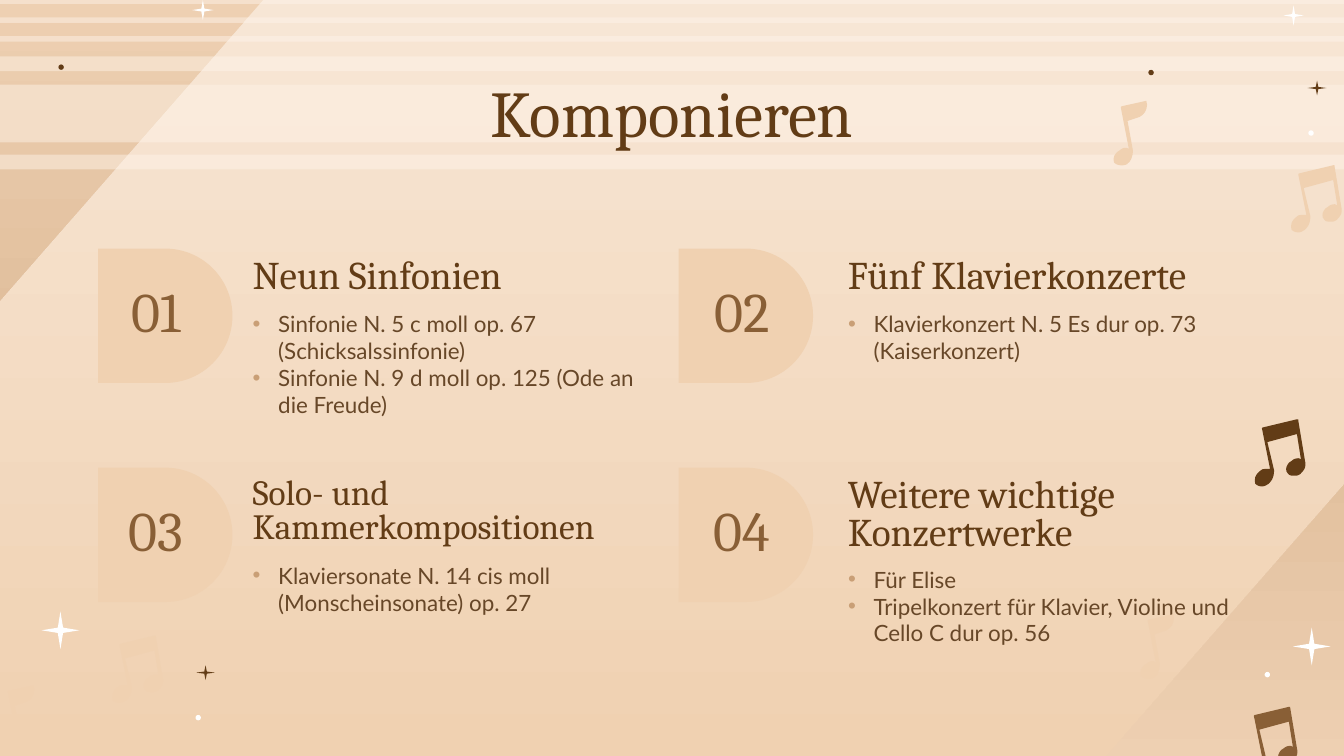
from lxml.etree import SubElement
from pptx import Presentation
from pptx.dml.color import RGBColor
from pptx.enum.shapes import MSO_SHAPE
from pptx.enum.text import MSO_ANCHOR, MSO_AUTO_SIZE, PP_ALIGN
from pptx.oxml.ns import qn
from pptx.util import Emu, Inches, Pt

CELL = Inches(0.1)  # the slide is a grid of 100 columns by 56.25 rows
COLS, ROWS = 100, 56.25

WHITE = RGBColor(0xFF, 0xFF, 0xFF)
CREAM = RGBColor(0xFF, 0xF5, 0xEB)
PALE = RGBColor(0xF7, 0xE6, 0xD5)
SAND = RGBColor(0xF0, 0xD1, 0xB1)
PEACH = RGBColor(0xEE, 0xD0, 0xB2)
TAN = RGBColor(0xCE, 0xA6, 0x7E)
BULLET = RGBColor(0xC9, 0x9F, 0x76)
BROWN = RGBColor(0x89, 0x5F, 0x36)
DARK = RGBColor(0x62, 0x3C, 0x16)
BODY = RGBColor(0x67, 0x47, 0x28)

# Outlines: a pair is a line's end, six numbers are a Bezier curve.
PAIR_NOTE = [
    (32, 0), (7, 6), (6, 6, 6, 7, 6, 7), (12, 37), (11, 37, 10, 37, 9, 37),
    (7, 37, 6, 37, 4, 39), (1, 41, 0, 45, 1, 48), (2, 49, 4, 50, 6, 50),
    (8, 50, 9, 49, 11, 48), (14, 45, 15, 42, 15, 38), (10, 17), (32, 11),
    (35, 30), (35, 30, 34, 29, 33, 29), (31, 29, 29, 30, 28, 31),
    (24, 33, 23, 38, 25, 40), (26, 42, 28, 42, 30, 42), (31, 42, 33, 42, 34, 41),
    (35, 41, 35, 40, 35, 40), (38, 38, 39, 34, 38, 31), (33, 1),
    (33, 0, 33, 0, 32, 0)]
SINGLE_NOTE = [
    (25, 0), (7, 4), (6, 4, 6, 5, 6, 5), (12, 36), (11, 35, 10, 35, 9, 35),
    (8, 35, 6, 36, 5, 37), (1, 39, 0, 43, 1, 46), (2, 47, 4, 48, 6, 48),
    (8, 48, 9, 48, 11, 47), (11, 47, 11, 46, 12, 46), (14, 44, 15, 40, 15, 37),
    (11, 15), (17, 13), (23, 12, 27, 6, 25, 0)]
STAR = [(50, 0), (43, 43), (0, 50), (43, 57), (50, 100), (57, 57), (100, 50), (57, 43)]
WEDGE = [(0, 2), (0, 572), (502, 572), (1003, 0)]

BACK_NOTES = [(PAIR_NOTE, 96, 12.3, SAND), (SINGLE_NOTE, 0, 51, SAND),
              (PAIR_NOTE, 92.7, 52.6, BROWN)]
FRONT_NOTES = [(PAIR_NOTE, 93.3, 31.2, DARK), (SINGLE_NOTE, 82.8, 7.5, SAND),
               (PAIR_NOTE, 8.3, 47.3, SAND), (SINGLE_NOTE, 84.8, 45.7, SAND)]
STARS = [(14.3, 0, 1.6, 1.5, WHITE), (95.5, 0.4, 1.5, 1.5, WHITE),
         (97.3, 6, 1.4, 1.1, DARK), (14.6, 49.5, 1.4, 1.1, DARK),
         (3.1, 45.5, 2.8, 2.8, WHITE), (96.2, 46.7, 2.8, 2.8, WHITE)]
DOTS = [(97.35, 9.7, WHITE), (85.45, 5.2, DARK), (4.35, 4.8, DARK),
        (14.55, 53.2, WHITE), (94.1, 50, WHITE)]
STAVES = [(6.3, 4.3), (4.2, 1.1), (11.5, 1.1), (2.7, 0.4), (1.3, 0.4), (-0.1, 0.4)]

# number, heading, heading size, first row of the list, list
CARDS = [
    ("01", "Neun Sinfonien", 21, 4.6,
     ["Sinfonie N. 5 c moll op. 67 (Schicksalssinfonie)",
      "Sinfonie N. 9 d moll op. 125 (Ode an die Freude)"]),
    ("02", "Fünf Klavierkonzerte", 21, 4.6,
     ["Klavierkonzert N. 5 Es dur op. 73 (Kaiserkonzert)"]),
    ("03", "Solo- und Kammerkompositionen", 19, 7,
     ["Klaviersonate N. 14 cis moll (Monscheinsonate) op. 27"]),
    ("04", "Weitere wichtige Konzertwerke", 21, 7.3,
     ["Für Elise", "Tripelkonzert für Klavier, Violine und Cello C dur op. 56"]),
]


def cells(n):
    return Emu(round(n * CELL))


def gradient(fill, first, last):
    fill.gradient()
    fill.gradient_angle = 270
    for stop, color in zip(fill.gradient_stops, (first, last)):
        stop.color.rgb = color


def plain(sp, color):
    sp.shadow.inherit = False
    sp.line.fill.background()
    sp.fill.solid()
    sp.fill.fore_color.rgb = color
    return sp


def shape(s, kind, x, y, w, h, color):
    return plain(s.shapes.add_shape(kind, *map(cells, (x, y, w, h))), color)


def flatten(outline, steps=6):
    """Turn lines and curves into points, in tenths of the outline's unit."""
    points = []
    for seg in outline:
        if len(seg) == 2:
            points.append((seg[0] * 10, seg[1] * 10))
            continue
        x0, y0 = points[-1]
        x1, y1, x2, y2, x3, y3 = (10 * v for v in seg)
        for t in (i / steps for i in range(1, steps + 1)):
            u = 1 - t
            a, b, c, d = u ** 3, 3 * u * u * t, 3 * u * t * t, t ** 3
            points.append((a * x0 + b * x1 + c * x2 + d * x3,
                           a * y0 + b * y1 + c * y2 + d * y3))
    return points


def outlined(s, outline, x, y, color, sx=0.1, sy=0.1):
    """Draw an outline at x, y; sx and sy are cells per unit of the outline."""
    first, *rest = flatten(outline)
    fb = s.shapes.build_freeform(*first, scale=(sx * CELL / 10, sy * CELL / 10))
    fb.add_line_segments(rest, close=True)
    return plain(fb.convert_to_shape(cells(x), cells(y)), color)


def write(sp, box, lines, size, font, color, align=PP_ALIGN.LEFT,
          anchor=MSO_ANCHOR.TOP, spacing=1.0, bullets=False):
    sp.left, sp.top, sp.width, sp.height = map(cells, box)
    tf = sp.text_frame
    tf.word_wrap, tf.auto_size = True, MSO_AUTO_SIZE.NONE
    tf.vertical_anchor = anchor
    tf.margin_left = tf.margin_right = tf.margin_top = tf.margin_bottom = 0
    for i, line in enumerate(lines):
        p = tf.add_paragraph() if i else tf.paragraphs[0]
        p.alignment, p.line_spacing, p.space_before = align, spacing, Pt(0)
        r = p.add_run()
        r.text = line
        r.font.size, r.font.name, r.font.bold = Pt(size), font, False
        r.font.color.rgb = color
        if bullets:
            pPr = p._p.get_or_add_pPr()
            pPr.set("marL", str(cells(1.9)))
            pPr.set("indent", str(-cells(1.9)))
            SubElement(SubElement(pPr, qn("a:buClr")), qn("a:srgbClr")).set("val", str(BULLET))
            SubElement(pPr, qn("a:buChar")).set("char", "•")


def to_front(s, sp):
    s.shapes._spTree.append(sp._element)
    return sp


def backdrop(s):
    gradient(s.background.fill, PALE, SAND)
    for x, y, turn in ((-80.2, -0.6, 0), (81.5, 0, 180)):
        wedge = outlined(s, WEDGE, x, y, PEACH)
        gradient(wedge.fill, PEACH, TAN)
        wedge.rotation = turn
    for y, h in STAVES:
        stave = shape(s, MSO_SHAPE.RECTANGLE, -6.4, y, 107.3, h, CREAM)
        clr = stave._element.spPr.find(qn("a:solidFill"))[0]
        SubElement(clr, qn("a:alpha")).set("val", "46000")
    for x, y, w, h, color in STARS:
        outlined(s, STAR, x, y, color, w / 100, h / 100)
    for x, y, color in DOTS:
        shape(s, MSO_SHAPE.OVAL, x, y, 0.4, 0.4, color)


def notes(s, items):
    for outline, x, y, color in items:
        outlined(s, outline, x, y, color)


def card(s, body, x, y, number_dx, text_dx, content):
    number, heading, size, list_dy, lines = content
    shape(s, MSO_SHAPE.FLOWCHART_DELAY, x, y, 10, 10, SAND)
    write(s.shapes.add_textbox(0, 0, 0, 0), (x + number_dx, y, 8, 9.1), [number],
          30, "Cambria", BROWN, PP_ALIGN.CENTER, MSO_ANCHOR.MIDDLE)
    write(s.shapes.add_textbox(0, 0, 0, 0), (x + text_dx, y + 0.8, 29.6, 3), [heading],
          size, "Cambria", DARK, spacing=0.8)
    write(to_front(s, body), (x + text_dx, y + list_dy, 29.6, 6.3), lines,
          12, "Lato", BODY, bullets=True)


def main():
    prs = Presentation()
    prs.slide_width, prs.slide_height = cells(COLS), cells(ROWS)
    s = prs.slides.add_slide(prs.slide_layouts[4])
    title, *bodies = list(s.placeholders)
    backdrop(s)
    notes(s, BACK_NOTES)
    write(to_front(s, title), (7.8, 4.9, 84.4, 6.3), ["Komponieren"], 35, "Cambria",
          DARK, PP_ALIGN.CENTER, MSO_ANCHOR.BOTTOM)
    columns = [(7.3, 0.3, 11.5), (50.5, 0.7, 12.6)]
    for i, (body, content) in enumerate(zip(bodies, CARDS)):
        row, col = divmod(i, 2)
        x, number_dx, text_dx = columns[col]
        card(s, body, x, 18.5 + row * 16.3, number_dx, text_dx, content)
    notes(s, FRONT_NOTES)
    prs.save("out.pptx")


if __name__ == "__main__":
    main()
